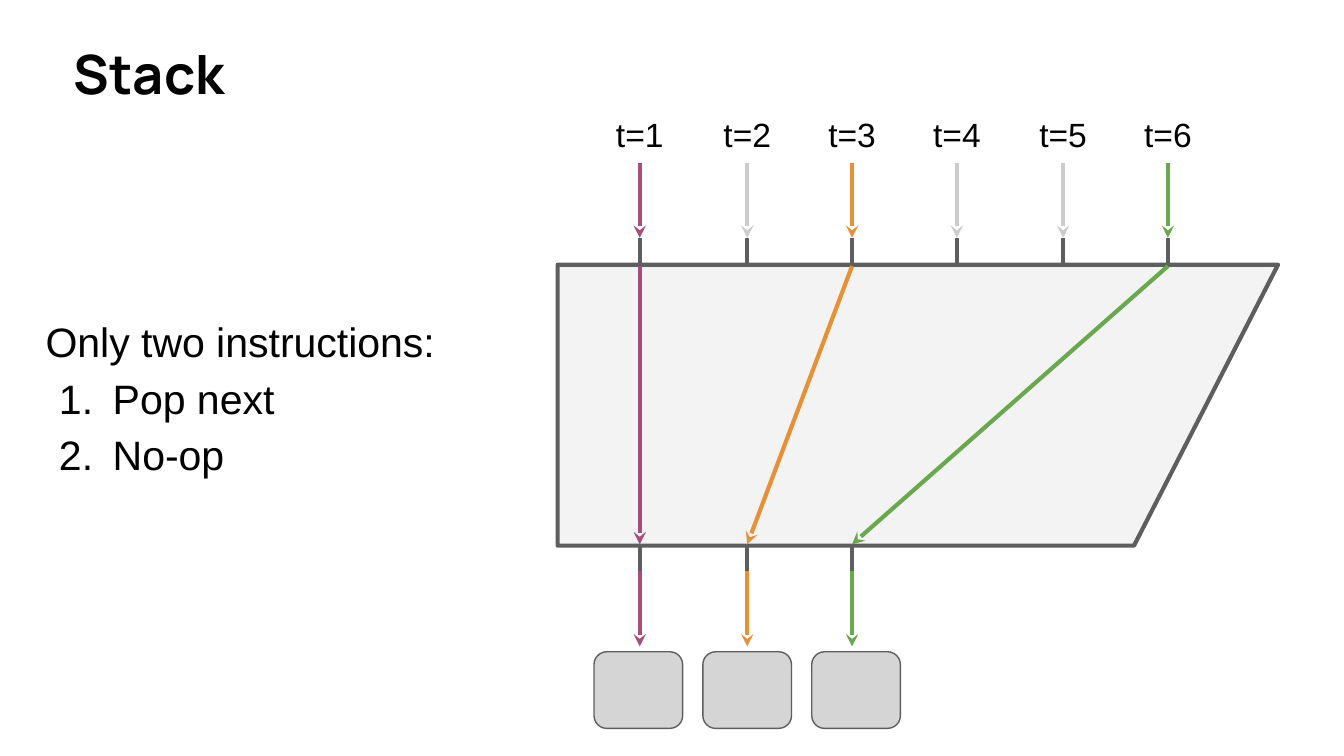
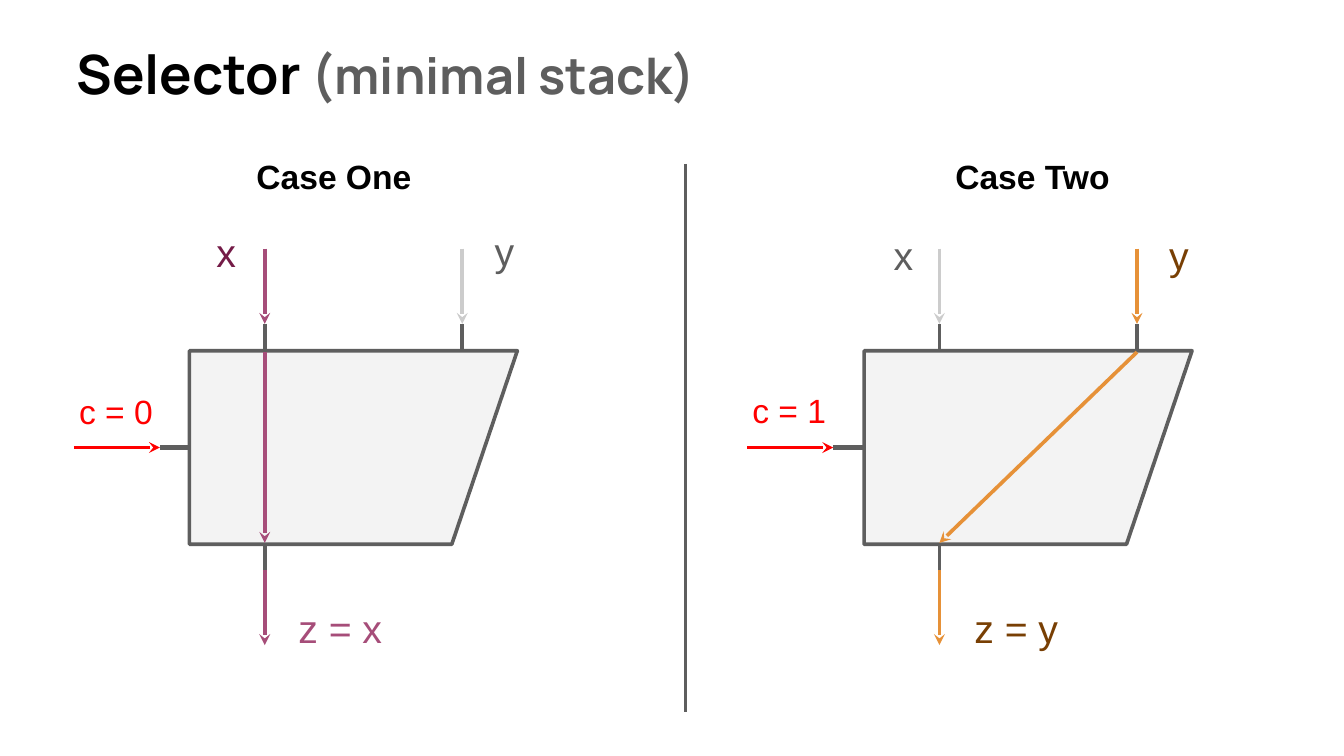
"""Two slides that explain a routing stack and its minimal form, the selector."""
from lxml import etree
from pptx import Presentation
from pptx.dml.color import RGBColor
from pptx.enum.shapes import MSO_CONNECTOR as LINE, MSO_SHAPE as SHAPE
from pptx.enum.text import MSO_ANCHOR as ANCHOR, MSO_AUTO_SIZE as SIZE, PP_ALIGN as ALIGN
from pptx.oxml.ns import qn
from pptx.util import Inches, Pt

BLACK = RGBColor(0x00, 0x00, 0x00)
GRAY = RGBColor(0x5E, 0x5E, 0x5E)
IDLE = RGBColor(0xCC, 0xCC, 0xCC)
BODY_FILL = RGBColor(0xF3, 0xF3, 0xF3)
CELL_FILL = RGBColor(0xD5, 0xD5, 0xD5)
PURPLE = RGBColor(0xA6, 0x4D, 0x79)
PLUM = RGBColor(0x74, 0x1B, 0x47)
ORANGE = RGBColor(0xE6, 0x91, 0x38)
BROWN = RGBColor(0x78, 0x3F, 0x04)
GREEN = RGBColor(0x6A, 0xA8, 0x4F)
RED = RGBColor(0xFF, 0x00, 0x00)
TITLE_FONT, BODY_FONT = "Manrope", "Arial"

STUB_IN, STUB_OUT, ARROW = 0.2, 0.19, 0.56

STACK_TITLE = [("Stack", 29, BLACK)]
STACK_BODY = (4.15, 1.97, 5.36, 2.09)
STACK_INPUTS = [
    ("t=1", 4.76, PURPLE), ("t=2", 5.56, IDLE), ("t=3", 6.34, ORANGE),
    ("t=4", 7.12, IDLE), ("t=5", 7.91, IDLE), ("t=6", 8.69, GREEN),
]
INSTRUCTIONS = ["Only two instructions:", "Pop next", "No-op"]

SELECTOR_TITLE = [("Selector ", 29, BLACK), ("(minimal stack)", 27, GRAY)]
SELECTOR_SIZE = (2.44, 1.44)
CASES = [
    {
        "left": 1.41, "heading": ("Case One", 1.81), "control": ("c = 0", 0.49, 2.81),
        "inputs": (PURPLE, IDLE), "picked": 0,
        "labels": [("x", 1.52, 1.61, PLUM), ("y", 3.59, 1.6, GRAY), ("z = x", 2.13, 4.41, PURPLE)],
    },
    {
        "left": 6.43, "heading": ("Case Two", 7.01), "control": ("c = 1", 5.5, 2.8),
        "inputs": (IDLE, ORANGE), "picked": 1,
        "labels": [("x", 6.56, 1.63, GRAY), ("y", 8.61, 1.63, BROWN), ("z = y", 7.16, 4.41, BROWN)],
    },
]


def format_frame(frame, inset=0.1):
    """Give a text frame even insets, wrapping and a top anchor."""
    frame.word_wrap = True
    frame.vertical_anchor = ANCHOR.TOP
    frame.margin_left = frame.margin_right = Inches(inset)
    frame.margin_top = frame.margin_bottom = Inches(inset)


def format_span(span, size, color, bold=False, font=BODY_FONT):
    """Set the font of one run."""
    span.font.name, span.font.size, span.font.bold = font, Pt(size), bold
    span.font.color.rgb = color


def add_page(deck, left, width, spans):
    """Add a title-only slide with a title made of sized, coloured spans."""
    page = deck.slides.add_slide(deck.slide_layouts[5])
    title = page.shapes.title
    title.left, title.top = Inches(left), Inches(0.13)
    title.width, title.height = Inches(width), Inches(0.69)
    format_frame(title.text_frame)
    title.text_frame.auto_size = SIZE.SHAPE_TO_FIT_TEXT
    para = title.text_frame.paragraphs[0]
    para.alignment, para.line_spacing = ALIGN.LEFT, 1.15
    for text, size, color in spans:
        span = para.add_run()
        span.text = text
        format_span(span, size, color, True, TITLE_FONT)
    return page


def add_text(page, text, left, top, width, height, size, color, bold=False, align=ALIGN.LEFT, inset=0.1):
    """Add a text box in one style and return its frame."""
    box = page.shapes.add_textbox(Inches(left), Inches(top), Inches(width), Inches(height))
    frame = box.text_frame
    format_frame(frame, inset)
    frame.text = text
    for para in frame.paragraphs:
        para.alignment = align
        for span in para.runs:
            format_span(span, size, color, bold)
    return frame


def number_para(para):
    """Turn a paragraph into an item of a numbered list."""
    props = para._p.get_or_add_pPr()
    props.set("marL", str(Inches(0.5)))
    props.set("indent", str(Inches(-0.4)))
    etree.SubElement(props, qn("a:buAutoNum"), type="arabicPeriod")


def add_line(page, x1, y1, x2, y2, color, weight, arrow=False):
    """Draw a straight line, with a stealth head at its end if asked."""
    line = page.shapes.add_connector(LINE.STRAIGHT, Inches(x1), Inches(y1), Inches(x2), Inches(y2))
    line.line.color.rgb, line.line.width = color, Pt(weight)
    if arrow:
        etree.SubElement(line.line._get_or_add_ln(), qn("a:tailEnd"), type="stealth")
    etree.SubElement(line._element.spPr, qn("a:effectLst"))


def add_block(page, kind, left, top, width, height, fill, weight):
    """Add a filled shape with a gray outline."""
    block = page.shapes.add_shape(kind, Inches(left), Inches(top), Inches(width), Inches(height))
    block.shadow.inherit = False
    block.fill.solid()
    block.fill.fore_color.rgb = fill
    block.line.color.rgb, block.line.width = GRAY, Pt(weight)
    return block


def add_body(page, left, top, width, height, weight):
    """Add the slanted body, a manual-input shape turned on its side."""
    shift = (width - height) / 2
    body = add_block(page, SHAPE.FLOWCHART_MANUAL_INPUT, left + shift, top - shift, height, width, BODY_FILL, weight)
    body.rotation = 90
    body._element.spPr.xfrm.set("flipH", "1")


def add_input(page, x, top, color, weight):
    """Draw an arrow and a stub that lead down into a body's top edge."""
    joint = top - STUB_IN
    add_line(page, x, joint, x, top, GRAY, weight)
    add_line(page, x, joint - ARROW, x, joint, color, weight, True)


def add_route(page, start, end, top, bottom, color, weight):
    """Draw a route through a body and the output that it feeds."""
    joint = bottom + STUB_OUT
    add_line(page, end, bottom, end, joint, GRAY, weight)
    add_line(page, end, joint, end, joint + ARROW, color, weight, True)
    add_line(page, start, top + 0.01, end, bottom - 0.01, color, weight, True)


def build_stack(deck):
    """Build the slide with six timed inputs and three outputs."""
    page = add_page(deck, 0.45, 7.34, STACK_TITLE)
    left, top, width, height = STACK_BODY
    add_body(page, left, top, width, height, 2.25)
    for label, x, color in STACK_INPUTS:
        add_input(page, x, top, color, 2.25)
        add_text(page, label, x - 0.46, 0.75, 0.92, 0.42, 18, BLACK, align=ALIGN.CENTER)
    active = [(x, color) for _, x, color in STACK_INPUTS if color != IDLE]
    for index, (start, color) in enumerate(active):
        add_route(page, start, STACK_INPUTS[index][1], top, top + height, color, 2.25)
        add_block(page, SHAPE.ROUNDED_RECTANGLE, 4.42 + 0.81 * index, 4.85, 0.66, 0.57, CELL_FILL, 0.75)
    frame = add_text(page, "\n".join(INSTRUCTIONS), 0.24, 2.2, 3.82, 1.23, 22, BLACK)
    for para in frame.paragraphs:
        para.line_spacing = 1.15
    for para in frame.paragraphs[1:]:
        number_para(para)


def add_case(page, case):
    """Draw one selector with its inputs, control and output."""
    left, top, weight = case["left"], 2.61, 1.97
    width, height = SELECTOR_SIZE
    ports = (left + 0.56, left + 2.03)
    add_body(page, left, top, width, height, weight)
    for x, color in zip(ports, case["inputs"]):
        add_input(page, x, top, color, weight)
    picked = case["picked"]
    add_route(page, ports[picked], ports[0], top, top + height, case["inputs"][picked], weight)
    text, x, y = case["control"]
    middle, tip = top + height / 2, x + 0.7
    add_text(page, text, x, y, 0.93, 0.51, 18, RED)
    add_line(page, tip - 0.64, middle, tip, middle, RED, weight, True)
    add_line(page, left, middle, tip, middle, GRAY, 2.25)
    heading, x = case["heading"]
    add_text(page, heading, x, 1.06, 1.76, 0.55, 18, BLACK, True)
    for text, x, y, color in case["labels"]:
        add_text(page, text, x, y, 1.2, 0.7, 21, color, inset=0.09)


def build_selector(deck):
    """Build the slide that compares the two selector cases."""
    page = add_page(deck, 0.47, 7.88, SELECTOR_TITLE)
    add_line(page, 5.1, 1.22, 5.1, 5.3, GRAY, 1.5)
    for case in CASES:
        add_case(page, case)


def main():
    """Build and save the deck."""
    deck = Presentation()
    deck.slide_width = Inches(10)
    deck.slide_height = Inches(10 * 9 / 16)
    build_stack(deck)
    build_selector(deck)
    deck.save("out.pptx")


if __name__ == "__main__":
    main()
